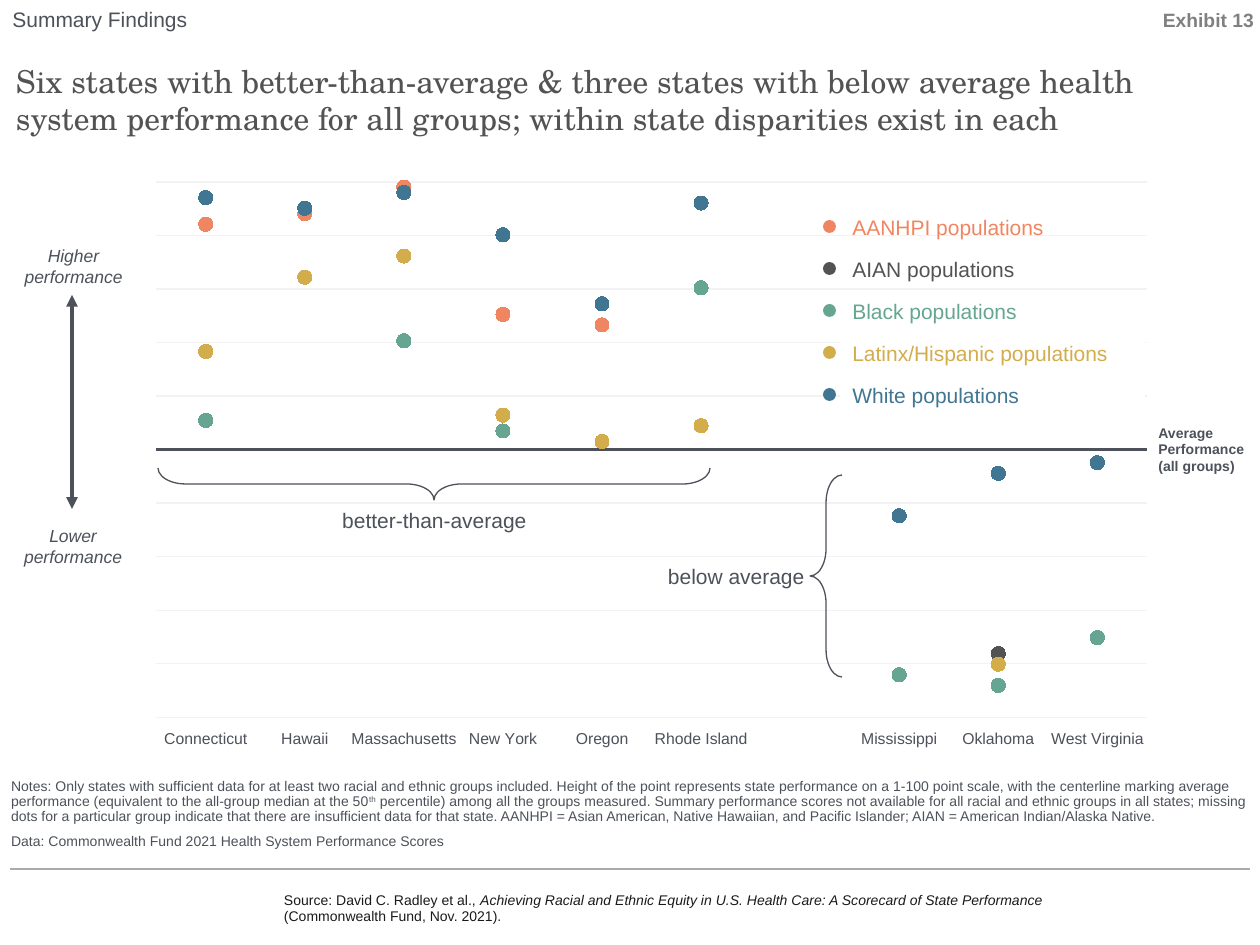
"""Build the exhibit on state health system performance by racial and ethnic group."""
from dataclasses import dataclass
from typing import NamedTuple

from lxml import etree
from pptx import Presentation
from pptx.chart.data import CategoryChartData
from pptx.dml.color import RGBColor
from pptx.enum.chart import XL_CHART_TYPE, XL_MARKER_STYLE, XL_TICK_LABEL_POSITION, XL_TICK_MARK
from pptx.enum.shapes import MSO_CONNECTOR, MSO_SHAPE
from pptx.enum.text import MSO_ANCHOR, PP_ALIGN
from pptx.oxml.ns import qn
from pptx.util import Pt

LINE_MARKERS = XL_CHART_TYPE.LINE_MARKERS
CIRCLE = XL_MARKER_STYLE.CIRCLE
LOW = XL_TICK_LABEL_POSITION.LOW
NO_TICK = XL_TICK_MARK.NONE
STRAIGHT = MSO_CONNECTOR.STRAIGHT
RECT, OVAL, BRACE = MSO_SHAPE.RECTANGLE, MSO_SHAPE.OVAL, MSO_SHAPE.RIGHT_BRACE
TOP, MIDDLE, BOTTOM = MSO_ANCHOR.TOP, MSO_ANCHOR.MIDDLE, MSO_ANCHOR.BOTTOM
LEFT, CENTER, RIGHT = PP_ALIGN.LEFT, PP_ALIGN.CENTER, PP_ALIGN.RIGHT
EMU_PER_PX = 914400 / 126


@dataclass(frozen=True)
class Theme:
    sans: str = "Arial"
    serif: str = "TeX Gyre Schola"
    white: str = "FFFFFF"
    ink: str = "4C515A"
    dark: str = "535353"
    black: str = "1A1A1A"
    gray: str = "808080"
    rule: str = "ABABAB"
    grid: str = "F2F2F2"
    aanhpi: str = "F08661"
    aian: str = "535353"
    green: str = "65A591"
    gold: str = "D3AC4C"
    blue: str = "417693"
    title: int = 18
    label: int = 12
    exhibit: int = 11
    arrow: int = 10
    axis: int = 9
    small: int = 8


T = Theme()


class Box(NamedTuple):
    x: int
    y: int
    w: int
    h: int


class Run(NamedTuple):
    text: str
    italic: bool = False
    raised: bool = False


class Key(NamedTuple):
    name: str
    color: str
    width: int
    filled: bool


class Series(NamedTuple):
    color: str
    values: tuple


KEYS = (
    Key("AANHPI populations", T.aanhpi, 256, False),
    Key("AIAN populations", T.aian, 243, False),
    Key("Black populations", T.green, 316, True),
    Key("Latinx/Hispanic populations", T.gold, 305, True),
    Key("White populations", T.blue, 305, True),
)
STATES = ("Connecticut", "Hawaii", "Massachusetts", "New York", "Oregon", "Rhode Island",
          "", "Mississippi", "Oklahoma", "West Virginia")
NA = None
SERIES = (
    Series(T.aian, (NA, NA, NA, NA, NA, NA, NA, NA, 12, NA)),
    Series(T.aanhpi, (93, 95, 100, 76, 74, NA, NA, NA, NA, NA)),
    Series(T.green, (56, NA, 71, 54, NA, 81, NA, 8, 6, 15)),
    Series(T.gold, (69, 83, 87, 57, 52, 55, NA, NA, 10, NA)),
    Series(T.blue, (98, 96, 99, 91, 78, 97, NA, 38, 46, 48)),
)
NOTES = (
    Run("Notes: Only states with sufficient data for at least two racial and ethnic groups included. "
        "Height of the point represents state performance on a 1-100 point scale, with the centerline "
        "marking average performance (equivalent to the all-group median at the 50"),
    Run("th", raised=True),
    Run(" percentile) among all the groups measured. Summary performance scores not available for all "
        "racial and ethnic groups in all states; missing dots for a particular group indicate that there "
        "are insufficient data for that state. AANHPI = Asian American, Native Hawaiian, and Pacific "
        "Islander; AIAN = American Indian/Alaska Native."),
)
SOURCE = (
    Run("Source: David C. Radley et al., "),
    Run("Achieving Racial and Ethnic Equity in U.S. Health Care: A Scorecard of State Performance", italic=True),
)


def px(n: float) -> int:
    return round(n * EMU_PER_PX)


def rgb(color: str) -> RGBColor:
    return RGBColor.from_string(color)


def add_shape(slide, kind, box: Box, fill=None, line=None, rotation=0):
    sp = slide.shapes.add_shape(kind, *map(px, box))
    sp.shadow.inherit = False
    sp.rotation = rotation
    if fill:
        sp.fill.solid()
        sp.fill.fore_color.rgb = rgb(fill)
    else:
        sp.fill.background()
    if line:
        sp.line.color.rgb = rgb(line)
        sp.line.width = Pt(0.75)
    else:
        sp.line.fill.background()
    return sp


def add_text(slide, box: Box, *paras, size=T.label, color=T.ink, font=T.sans, bold=False, italic=False,
             align=LEFT, anchor=TOP, flush=False, spacing=None, after=0, fill=None):
    sp = add_shape(slide, RECT, box, fill) if fill else slide.shapes.add_textbox(*map(px, box))
    tf = sp.text_frame
    tf.word_wrap = True
    tf.vertical_anchor = anchor
    if flush:
        tf.margin_left = tf.margin_top = tf.margin_right = tf.margin_bottom = 0
    for i, para in enumerate(paras):
        p = tf.add_paragraph() if i else tf.paragraphs[0]
        p.alignment, p.line_spacing, p.space_after = align, spacing, Pt(after)
        for run in (Run(para),) if isinstance(para, str) else para:
            r = p.add_run()
            r.text = run.text
            r.font.name, r.font.size, r.font.bold = font, Pt(size), bold
            r.font.italic = italic or run.italic
            r.font.color.rgb = rgb(color)
            if run.raised:
                r.font._element.set("baseline", "30000")


def add_line(slide, start: tuple, end: tuple, color: str, width: float, arrows=False) -> None:
    sp = slide.shapes.add_connector(STRAIGHT, *map(px, start + end))
    sp.line.color.rgb = rgb(color)
    sp.line.width = Pt(width)
    if arrows:
        for tag in ("a:headEnd", "a:tailEnd"):
            etree.SubElement(sp.line._get_or_add_ln(), qn(tag), type="triangle")
    etree.SubElement(sp._element.spPr, qn("a:effectLst"))


def place_plot(chart, x: float, y: float, w: float, h: float) -> None:
    area = chart._chartSpace.find(".//" + qn("c:plotArea"))
    for old in area.findall(qn("c:layout")):
        area.remove(old)
    layout = etree.Element(qn("c:layout"))
    area.insert(0, layout)
    manual = etree.SubElement(layout, qn("c:manualLayout"))
    settings = dict(layoutTarget="inner", xMode="edge", yMode="edge", x=x, y=y, w=w, h=h)
    for tag, val in settings.items():
        etree.SubElement(manual, qn("c:" + tag), val=str(val))


def add_scores(slide, box: Box) -> None:
    data = CategoryChartData()
    data.categories = STATES
    for i, series in enumerate(SERIES, 1):
        data.add_series(f"Series {i}", series.values)
    chart = slide.shapes.add_chart(LINE_MARKERS, *map(px, box), data).chart
    chart.has_legend = chart.has_title = False
    chart.font.name, chart.font.size = T.sans, Pt(T.arrow)
    chart.font.color.rgb = rgb(T.black)
    place_plot(chart, 0.04, 0.03, 0.96, 0.85)
    cat, val = chart.category_axis, chart.value_axis
    cat.tick_label_position = LOW
    cat.major_tick_mark = cat.minor_tick_mark = NO_TICK
    font = cat.tick_labels.font
    font.name, font.size, font.color.rgb = T.sans, Pt(T.axis), rgb(T.ink)
    cat.format.line.color.rgb = rgb(T.ink)
    cat.format.line.width = Pt(1.25)
    val.minimum_scale, val.maximum_scale, val.major_unit = 0, 101, 10.1
    val.crosses_at = 50.5
    val.visible = False
    val.major_gridlines.format.line.color.rgb = rgb(T.grid)
    val.major_gridlines.format.line.width = Pt(0.75)
    for s, series in zip(chart.plots[0].series, SERIES):
        s.smooth = False
        s.format.line.fill.background()
        s.marker.style, s.marker.size = CIRCLE, 8
        s.marker.format.fill.solid()
        s.marker.format.fill.fore_color.rgb = rgb(series.color)
        s.marker.format.line.fill.background()


def add_brace(slide, box: Box, rotation: int) -> None:
    sp = add_shape(slide, BRACE, box, line=T.ink, rotation=rotation)
    sp.adjustments[0], sp.adjustments[1] = 0.86, 0.5


def add_key(slide, key: Key, x: int, y: int) -> None:
    add_shape(slide, OVAL, Box(x, y + 12, 13, 13), key.color)
    add_text(slide, Box(x + 17, y, key.width, 38), key.name, color=key.color,
             fill=T.white if key.filled else None)


def main() -> None:
    prs = Presentation()
    prs.slide_width, prs.slide_height = px(1260), px(945)
    s = prs.slides.add_slide(prs.slide_layouts[6])
    add_line(s, (1250, 869), (10, 869), T.rule, 0.75)
    add_text(s, Box(284, 891, 882, 34), SOURCE, "(Commonwealth Fund, Nov. 2021).",
             size=T.small, color=T.black, anchor=MIDDLE, flush=True)
    add_text(s, Box(16, 43, 1159, 113), "Six states with better-than-average & three states with below average "
             "health system performance for all groups; within state disparities exist in each",
             size=T.title, color=T.dark, font=T.serif, anchor=MIDDLE, flush=True)
    add_scores(s, Box(115, 163, 1033, 630))
    add_line(s, (72, 295), (72, 509), T.ink, 2.25, arrows=True)
    for word, box in (("Lower", Box(6, 519, 134, 55)), ("Higher", Box(1, 239, 145, 55))):
        add_text(s, box, f"{word} performance", size=T.arrow, italic=True, align=CENTER)
    add_text(s, Box(11, 782, 1240, 68), NOTES, "Data: Commonwealth Fund 2021 Health System Performance Scores",
             size=T.small, anchor=BOTTOM, flush=True, spacing=0.9, after=6)
    add_text(s, Box(1157, 0, 103, 42), "Exhibit 13", size=T.exhibit, color=T.gray, bold=True,
             align=CENTER, anchor=MIDDLE, flush=True, spacing=0.9, after=6)
    add_text(s, Box(0, 0, 447, 38), "Summary Findings", anchor=MIDDLE)
    add_brace(s, Box(418, 208, 32, 552), 90)
    add_text(s, Box(265, 501, 339, 38), "better-than-average", align=CENTER)
    add_brace(s, Box(810, 475, 32, 202), 180)
    add_text(s, Box(620, 557, 197, 38), "below average", align=RIGHT)
    for i, key in enumerate(KEYS):
        add_key(s, key, 823, 208 + 42 * i)
    add_text(s, Box(1146, 418, 111, 63), "Average", "Performance (all groups)", size=T.small, bold=True)
    prs.save("out.pptx")


if __name__ == "__main__":
    main()
